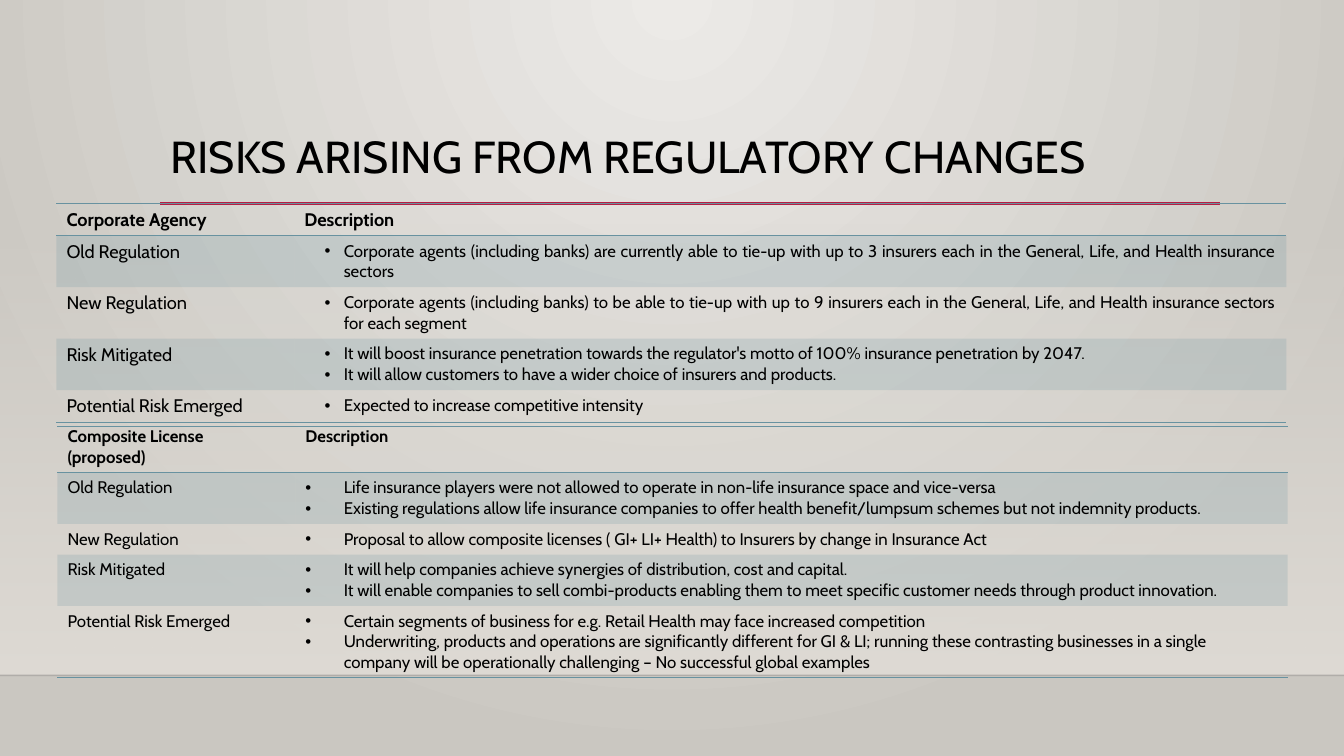
from lxml import etree
from pptx import Presentation
from pptx.dml.color import RGBColor
from pptx.enum.shapes import MSO_CONNECTOR, MSO_SHAPE
from pptx.enum.text import MSO_ANCHOR, PP_ALIGN
from pptx.oxml.ns import qn
from pptx.util import Inches, Pt

LEFT, JUSTIFY = PP_ALIGN.LEFT, PP_ALIGN.JUSTIFY
TOP = MSO_ANCHOR.TOP
STRAIGHT = MSO_CONNECTOR.STRAIGHT
RECTANGLE = MSO_SHAPE.RECTANGLE
FONT = "Cabin"
COLOURS = {
    "text": "000000", "glow": "ECEAE7", "edge": "CAC7C1", "wall": "DFDBD5",
    "floor line": "000001", "accent": "B71E42", "teal": "6892A0",
}
COLUMN_WIDTHS = [2.36, 9.84]
NO_STYLE_NO_GRID = "{2D5ABB26-0587-4C30-8999-92F81FD0307C}"


def write(text_frame, lines, size=12, bold=False, align=LEFT, hanging=None, spacing=None):
    """Fill a frame; hanging is (text indent, bullet offset) in inches."""
    text_frame.word_wrap = True
    for index, line in enumerate(lines):
        paragraph = text_frame.paragraphs[0] if index == 0 else text_frame.add_paragraph()
        if hanging:
            properties = paragraph._p.get_or_add_pPr()
            properties.set("marL", str(Inches(hanging[0])))
            properties.set("indent", str(Inches(-hanging[1])))
            etree.SubElement(properties, qn("a:buFont")).set("typeface", "Arial")
            etree.SubElement(properties, qn("a:buChar")).set("char", "•")
        paragraph.alignment = align
        paragraph.line_spacing = spacing
        run = paragraph.add_run()
        run.text = line
        run.font.name, run.font.size, run.font.bold = FONT, Pt(size), bold
        run.font.color.rgb = RGBColor.from_string(COLOURS["text"])


def set_alpha(colour_parent, percent):
    colour = colour_parent.find(".//" + qn("a:srgbClr"))
    etree.SubElement(colour, qn("a:alpha")).set("val", str(percent * 1000))


presentation = Presentation()
presentation.slide_width, presentation.slide_height = Inches(13.33), Inches(7.5)
slide = presentation.slides.add_slide(presentation.slide_layouts[5])

# Background glow and wall
wall = slide.shapes.add_shape(RECTANGLE, 0, Inches(2.21), Inches(13.33), Inches(4.49))
wall.shadow.inherit = False
wall.line.fill.background()
for fill, names in ((slide.background.fill, ("glow", "edge")), (wall.fill, ("wall", "wall"))):
    fill.gradient()
    for stop, name, position in zip(fill.gradient_stops, names, (0, 1)):
        stop.color.rgb = RGBColor.from_string(COLOURS[name])
        stop.position = position
wall.fill.gradient_angle = 270
set_alpha(wall._element.spPr.find(".//" + qn("a:gs")), 0)

glow = slide._element.cSld.find(qn("p:bg")).find(".//" + qn("a:gradFill"))
glow.remove(glow.find(qn("a:lin")))
circle = etree.SubElement(glow, qn("a:path"))
circle.set("path", "circle")
focus = etree.SubElement(circle, qn("a:fillToRect"))
for side, percent in zip("ltrb", (43, 0, 43, 100)):
    focus.set(side, str(percent * 1000))

# Floor line and title rule
for start, end, y, name, width, alpha in (
    (0, 13.33, 6.7, "floor line", 1, 20),
    (1.59, 12.1, 2.02, "accent", 2.5, 100),
):
    rule = slide.shapes.add_connector(STRAIGHT, Inches(start), Inches(y), Inches(end), Inches(y))
    rule.line.width = Pt(width)
    rule.line.color.rgb = RGBColor.from_string(COLOURS[name])
    set_alpha(rule._element.spPr, alpha)
    etree.SubElement(rule._element.spPr, qn("a:effectLst"))

title = slide.shapes.title
slide.shapes._spTree.append(title._element)
title.left, title.top, title.width, title.height = map(Inches, (1.59, 1.29, 10.5, 0.74))
title.text_frame.vertical_anchor = TOP
write(title.text_frame, ["RISKS ARISING FROM REGULATORY CHANGES"], size=32, spacing=0.9)

corporate_agency = [
    ("Corporate Agency", ["Description"]),
    ("Old Regulation", [
        "Corporate agents (including banks) are currently able to tie-up with up to 3 insurers "
        "each in the General, Life, and Health insurance sectors"]),
    ("New Regulation", [
        "Corporate agents (including banks) to be able to tie-up with up to 9 insurers "
        "each in the General, Life, and Health insurance sectors for each segment"]),
    ("Risk Mitigated", [
        "It will boost insurance penetration towards the regulator's motto of 100% insurance "
        "penetration by 2047.",
        "It will allow customers to have a wider choice of insurers and products."]),
    ("Potential Risk Emerged", ["Expected to increase competitive intensity"]),
]
composite_license = [
    ("Composite License (proposed)", ["Description"]),
    ("Old Regulation", [
        "Life insurance players were not allowed to operate in non-life insurance space "
        "and vice-versa",
        "Existing regulations allow life insurance companies to offer health benefit/lumpsum "
        "schemes but not indemnity products."]),
    ("New Regulation", [
        "Proposal to allow composite licenses ( GI+ LI+ Health) to Insurers by change in "
        "Insurance Act"]),
    ("Risk Mitigated", [
        "It will help companies achieve synergies of distribution, cost and capital.",
        "It will enable companies to sell combi-products enabling them to meet specific "
        "customer needs through product innovation."]),
    ("Potential Risk Emerged", [
        "Certain segments of business for e.g. Retail Health may face increased competition",
        "Underwriting, products and operations are significantly different for GI & LI; running "
        "these contrasting businesses in a single company will be operationally challenging "
        "– No successful global examples"]),
]

# left, top, row heights, rows, label size, bullet alignment, bullet indents, header top margin
tables = (
    (0.56, 2.02, [0.32, 0.51, 0.51, 0.51, 0.31], corporate_agency, 13, JUSTIFY, (0.39, 0.19), 0.05),
    (0.57, 4.23, [0.28, 0.51, 0.3, 0.51, 0.71], composite_license, 12, LEFT, (0.38, 0.38), 0),
)
for left, top, heights, rows, label_size, align, hanging, header_margin in tables:
    frame = slide.shapes.add_table(
        len(rows), len(COLUMN_WIDTHS), Inches(left), Inches(top),
        Inches(sum(COLUMN_WIDTHS)), Inches(sum(heights)))
    table = frame.table
    table.first_row = table.horz_banding = False
    table._tbl.tblPr.find(qn("a:tableStyleId")).text = NO_STYLE_NO_GRID
    for column, width in zip(table.columns, COLUMN_WIDTHS):
        column.width = Inches(width)
    for row_index, (label, description) in enumerate(rows):
        table.rows[row_index].height = Inches(heights[row_index])
        header = row_index == 0
        borders = {0: ("lnT", "lnB"), len(rows) - 1: ("lnB",)}.get(row_index, ())
        for column_index, lines in enumerate(([label], description)):
            cell = table.cell(row_index, column_index)
            cell.vertical_anchor = TOP
            cell.margin_top = Inches(header_margin if header else 0.05)
            if header or column_index == 0:
                write(cell.text_frame, lines, size=label_size, bold=header)
            else:
                write(cell.text_frame, lines, align=align, hanging=hanging)
            properties = cell._tc.get_or_add_tcPr()
            for side in borders:
                border = etree.SubElement(properties, qn("a:" + side))
                border.set("w", str(Pt(1)))
                solid = etree.SubElement(border, qn("a:solidFill"))
                etree.SubElement(solid, qn("a:srgbClr")).set("val", COLOURS["teal"])
            if row_index % 2:
                cell.fill.solid()
                cell.fill.fore_color.rgb = RGBColor.from_string(COLOURS["teal"])
                set_alpha(properties, 20)
            else:
                cell.fill.background()

presentation.save("out.pptx")
